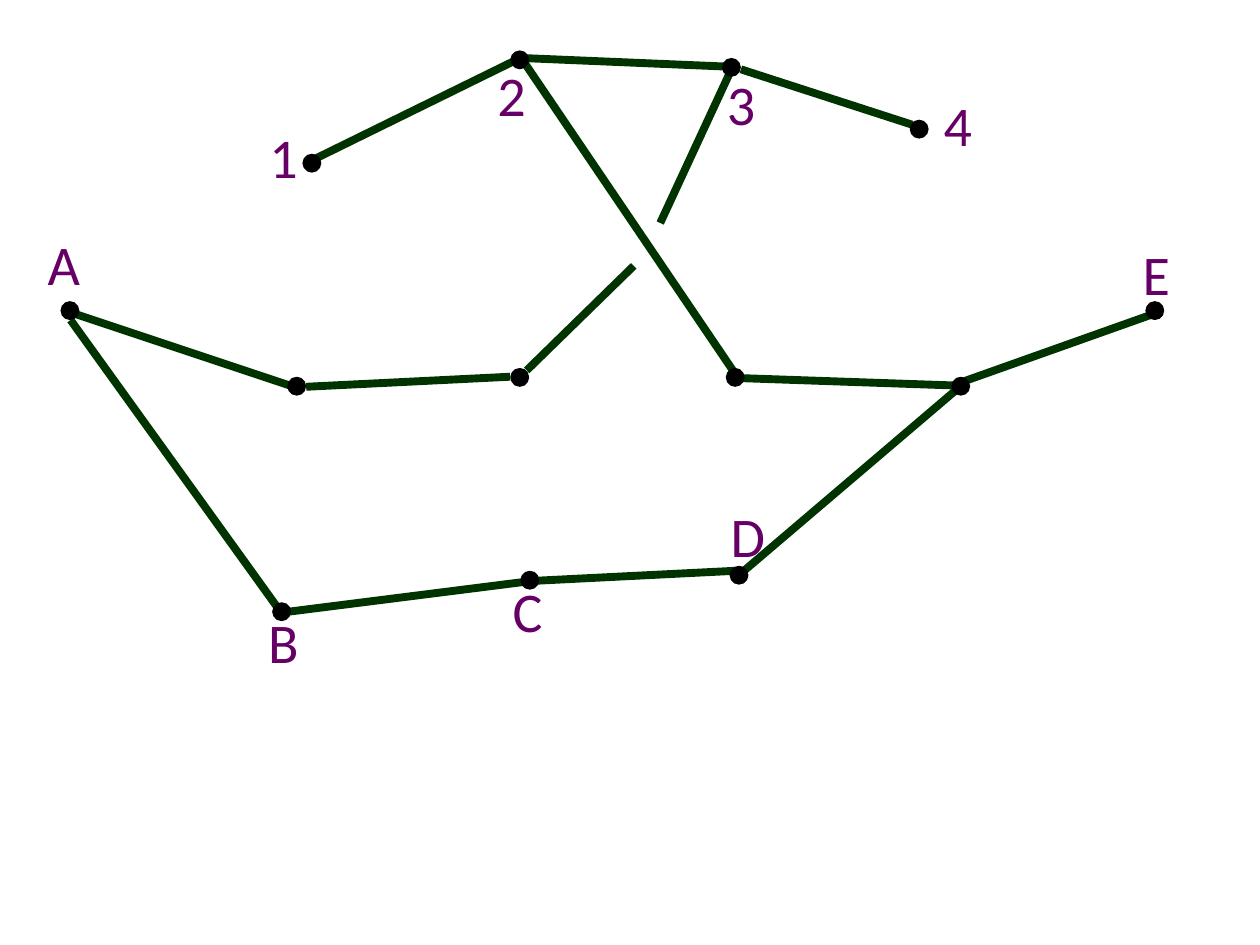
from lxml.etree import SubElement as sub
from pptx import Presentation
from pptx.dml.color import RGBColor as RGB
from pptx.enum.shapes import MSO_CONNECTOR as LINK, MSO_SHAPE as FORM
from pptx.enum.text import MSO_AUTO_SIZE as FIT
from pptx.oxml.ns import qn
from pptx.util import Inches, Pt

GREEN, BLACK, PLUM = "003300", "000000", "660066"
DOT = 0.15
BOX = (0.47, 0.64)
FONT = {"name": "Calibri", "size": Pt(32)}
FRAME = {"word_wrap": True, "auto_size": FIT.SHAPE_TO_FIT_TEXT}

# Edges: start x, y, end x, y
EDGES = [
    # Upper chain 1-2-3-4 and the crossing below it
    (2.42, 1.3, 4.13, 0.46), (4.13, 0.46, 5.8, 0.53),
    (5.88, 0.55, 7.24, 0.99), (4.13, 0.45, 5.83, 2.96),
    (5.81, 0.54, 5.24, 1.77), (4.18, 2.94, 5.03, 2.11),
    # Middle chain from A to E
    (0.53, 2.47, 2.33, 3.07), (2.43, 3.07, 4.05, 2.99),
    (5.85, 3, 7.59, 3.06), (7.64, 3.03, 9.16, 2.49),
    # Lower chain through B, C and D
    (0.56, 2.54, 2.23, 4.86), (2.25, 4.86, 4.15, 4.62),
    (4.24, 4.61, 5.84, 4.53), (5.87, 4.56, 7.63, 3.06),
]

# Nodes: left, top
NODES = [
    (2.4, 1.22), (4.05, 0.4), (5.73, 0.46), (7.22, 0.95),
    (0.48, 2.39), (2.28, 2.99), (4.05, 2.92),
    (5.76, 2.92), (7.55, 2.99), (9.09, 2.39),
    (2.16, 4.78), (4.13, 4.53), (5.79, 4.49),
]

# Labels: left, top of each text box
LABELS = {
    "A": (0.28, 1.77), "B": (2.03, 4.77), "C": (3.97, 4.53),
    "D": (5.7, 3.93), "E": (8.97, 1.85),
    "1": (2.04, 0.92), "2": (3.85, 0.43),
    "3": (5.67, 0.5), "4": (7.39, 0.67),
}


def color(code):
    return RGB.from_string(code)


def lengths(*values):
    return [Inches(v) for v in values]


def apply(target, values):
    for key, value in values.items():
        setattr(target, key, value)


def add_edge(group, ends):
    edge = group.shapes.add_connector(LINK.STRAIGHT, *lengths(*ends))
    edge.line.color.rgb = color(GREEN)
    edge.line.width = Pt(4.5)
    sub(edge._element.spPr, qn("a:effectLst"))


def add_node(group, left, top):
    node = group.shapes.add_shape(FORM.OVAL, *lengths(left, top, DOT, DOT))
    node.shadow.inherit = False
    node.fill.solid()
    node.fill.fore_color.rgb = color(BLACK)
    node.line.fill.background()


def add_label(group, text, left, top):
    frame = group.shapes.add_textbox(*lengths(left, top, *BOX)).text_frame
    apply(frame, FRAME)
    run = frame.paragraphs[0].add_run()
    run.text = text
    apply(run.font, FONT)
    run.font.color.rgb = color(PLUM)


def main():
    deck = Presentation()
    apply(deck, {"slide_width": Inches(10), "slide_height": Inches(7.5)})
    slide = deck.slides.add_slide(deck.slide_layouts[6])
    graph = slide.shapes.add_group_shape()

    # Edges lie behind the nodes, labels on top
    for ends in EDGES:
        add_edge(graph, ends)
    for spot in NODES:
        add_node(graph, *spot)
    for text, spot in LABELS.items():
        add_label(graph, text, *spot)

    deck.save("out.pptx")


if __name__ == "__main__":
    main()
